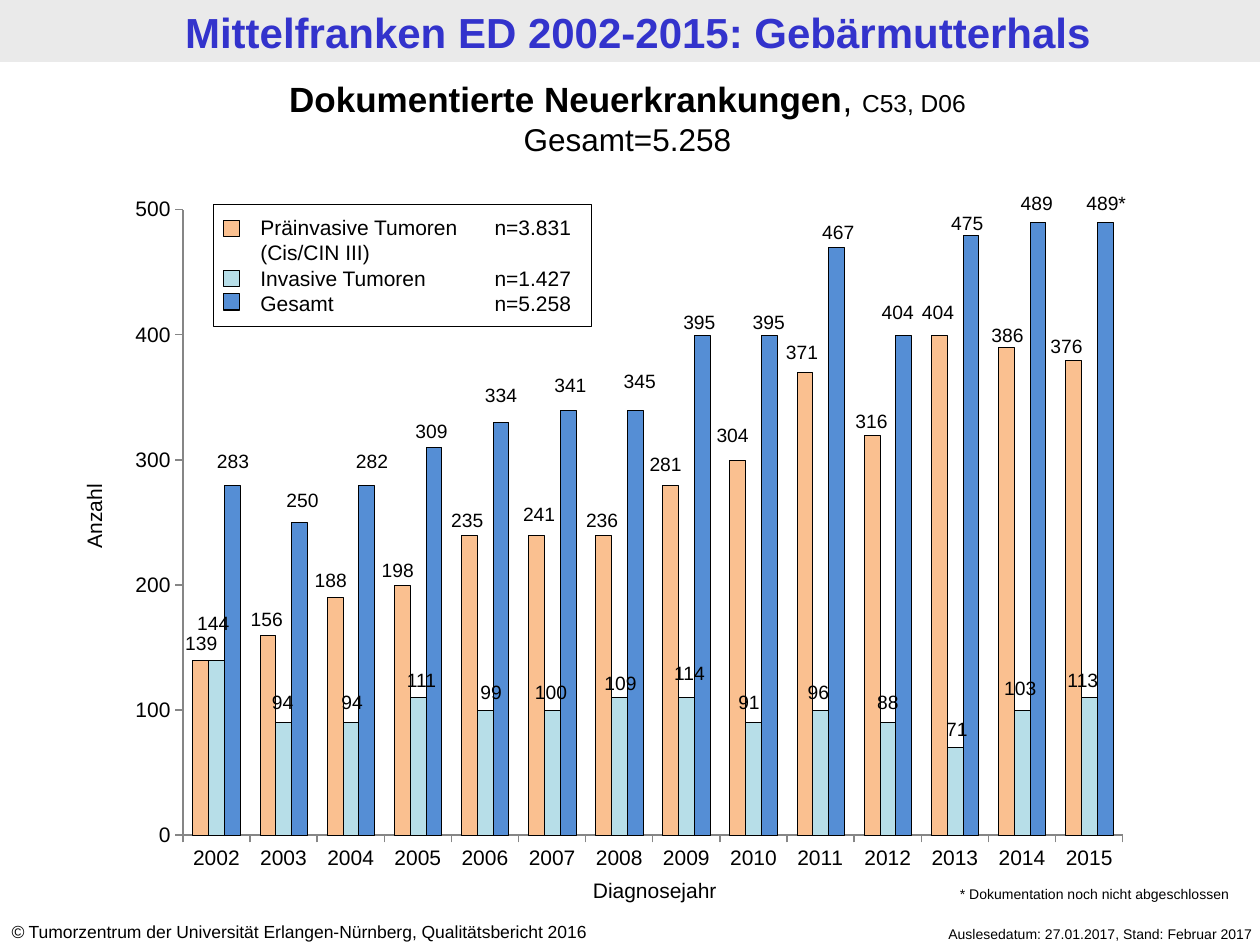
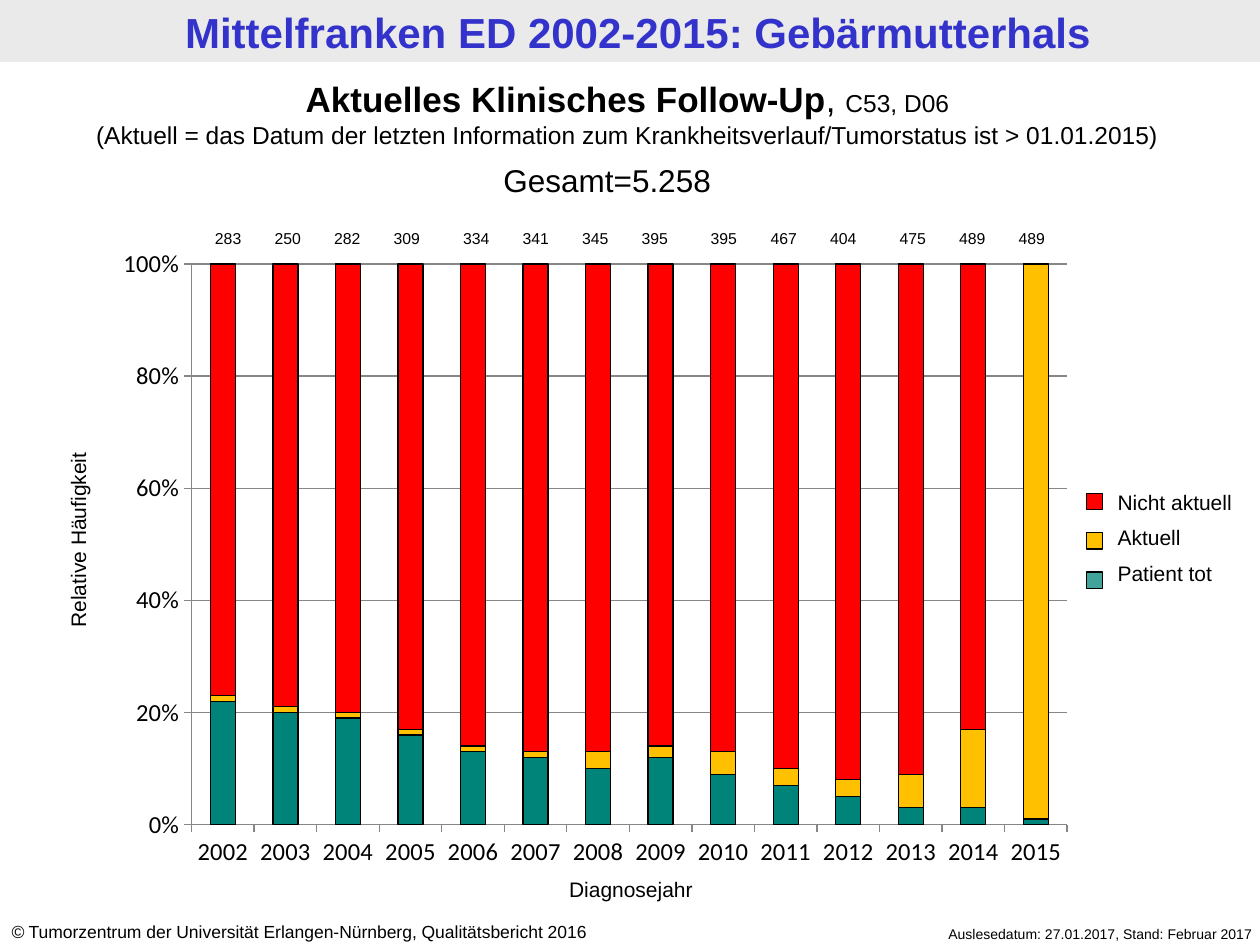
from dataclasses import dataclass

from lxml.etree import SubElement
from pptx import Presentation
from pptx.chart.data import CategoryChartData
from pptx.dml.color import RGBColor
from pptx.enum.chart import XL_CHART_TYPE, XL_TICK_MARK
from pptx.enum.shapes import MSO_SHAPE
from pptx.enum.text import MSO_AUTO_SIZE, PP_ALIGN
from pptx.oxml import parse_xml
from pptx.oxml.ns import nsdecls, qn
from pptx.util import Cm, Pt


@dataclass(frozen=True)
class Theme:
    # Fonts
    font: str = "Arial"
    chart_font: str = "Calibri"
    # Colours
    ink: str = "000000"
    title: str = "3333CC"
    band: str = "EAEAEA"
    axis: str = "868686"
    preinvasive: str = "FAC090"
    invasive: str = "B7DEE8"
    total: str = "558ED5"
    dead: str = "008378"
    current: str = "FFC000"
    outdated: str = "FF0000"
    # Type sizes
    title_size: int = 24
    heading_size: int = 20
    total_size: int = 18
    code_size: int = 14
    body_size: int = 12
    label_size: int = 11
    source_size: int = 10
    count_size: int = 9
    note_size: int = 8


THEME = Theme()
TITLE = "Mittelfranken ED 2002-2015: Gebärmutterhals"
YEARS = [str(year) for year in range(2002, 2016)]
SWATCH = 0.33

# New cases per year
PREINVASIVE = [139, 156, 188, 198, 235, 241, 236, 281, 304, 371, 316, 404, 386, 376]
INVASIVE = [144, 94, 94, 111, 99, 100, 109, 114, 91, 96, 88, 71, 103, 113]
TOTAL = [pre + inv for pre, inv in zip(PREINVASIVE, INVASIVE)]

# Centre and top of each bar's label, in cm
PREINVASIVE_SPOTS = [
    (4.06, 12.6), (5.38, 12.12), (6.67, 11.33), (8.02, 11.13), (9.42, 10.12),
    (10.87, 10), (12.14, 10.12), (13.42, 8.99), (14.77, 8.41), (16.17, 6.73),
    (17.57, 8.13), (18.91, 5.92), (20.31, 6.39), (21.5, 6.6)]
INVASIVE_SPOTS = [
    (4.3, 12.19), (5.7, 13.79), (7.1, 13.79), (8.5, 13.34), (9.9, 13.59),
    (11.11, 13.59), (12.51, 13.41), (13.9, 13.21), (15.1, 13.79), (16.5, 13.59),
    (17.9, 13.79), (19.29, 14.33), (20.57, 13.51), (21.83, 13.34)]
TOTAL_SPOTS = [
    (4.7, 8.92), (6.1, 9.72), (7.5, 8.92), (8.7, 8.33), (10.1, 7.59),
    (11.5, 7.39), (12.9, 7.32), (14.1, 6.12), (15.5, 6.12), (16.9, 4.32),
    (18.1, 5.92), (19.5, 4.12), (20.9, 3.73), (22.3, 3.73)]

# Follow-up status per year, in percent
DEAD = [22, 20, 19, 16, 13, 12, 10, 12, 9, 7, 5, 3, 3, 1]
CURRENT = [1, 1, 1, 1, 1, 1, 3, 2, 4, 3, 3, 6, 14, 99]
OUTDATED = [77, 79, 80, 83, 86, 87, 87, 86, 87, 90, 91, 91, 83, 0]
COUNT_CENTRES = [4.6, 5.8, 7.0, 8.2, 9.6, 10.8, 12.0, 13.2, 14.59, 15.8,
                 17.0, 18.4, 19.6, 20.8]


def rgb(color):
    return RGBColor.from_string(color)


def to_tens(values):
    return [round(value, -1) for value in values]


def add_run(paragraph, text, *, size=THEME.body_size, bold=False, italic=False,
            color=THEME.ink):
    run = paragraph.add_run()
    run.text = text
    run.font.name = THEME.font
    run.font.size = Pt(size)
    run.font.bold = bold
    run.font.italic = italic
    run.font.color.rgb = rgb(color)


class Deck:
    def __init__(self, theme):
        self.theme = theme
        self.prs = Presentation()
        self.prs.slide_width, self.prs.slide_height = Cm(25.4), Cm(19.05)
        self.slide = None

    def new_slide(self):
        """Add a slide with its title band and footers."""
        theme = self.theme
        self.slide = self.prs.slides.add_slide(self.prs.slide_layouts[6])
        self.rect(0, 0, 25.4, 1.25, fill=theme.band)
        self.text(0.16, 0.04, 25.4, 1.24,
                  [[(TITLE, dict(size=theme.title_size, bold=True, color=theme.title))]],
                  align=PP_ALIGN.CENTER, inset=(0.23, 0.1))
        source = dict(size=theme.source_size)
        self.text(-0.02, 18.43, 13.3, 0.69, [[
            ("©", dict(source, italic=True)),
            (" Tumorzentrum der Universität Erlangen-Nürnberg, Qualitätsbericht 2016",
             source)]])
        self.text(16.89, 18.52, 8.61, 0.61,
                  [[("Auslesedatum: 27.01.2017, Stand: Februar 2017",
                     dict(size=theme.note_size))]], align=PP_ALIGN.RIGHT)

    def rect(self, left, top, width, height, fill=None, line=None, alpha=None):
        box = self.slide.shapes.add_shape(
            MSO_SHAPE.RECTANGLE, Cm(left), Cm(top), Cm(width), Cm(height))
        box.shadow.inherit = False
        if fill:
            box.fill.solid()
            box.fill.fore_color.rgb = rgb(fill)
        else:
            box.fill.background()
        if line:
            box.line.color.rgb = rgb(line)
            box.line.width = Pt(0.75)
        else:
            box.line.fill.background()
        if alpha:
            color = box.fill._xPr.find(qn("a:solidFill"))[0]
            SubElement(color, qn("a:alpha"), val=str(alpha * 1000))

    def swatch(self, left, top, fill, alpha=None):
        self.rect(left, top, SWATCH, SWATCH, fill, self.theme.ink, alpha)

    def text(self, left, top, width, height, paragraphs, align=PP_ALIGN.LEFT,
             inset=(0.25, 0.13), rotation=0, gap=0, tabs=()):
        """Each paragraph is a list of (text, format) runs."""
        box = self.slide.shapes.add_textbox(Cm(left), Cm(top), Cm(width), Cm(height))
        box.rotation = rotation
        frame = box.text_frame
        frame.word_wrap = True
        frame.auto_size = MSO_AUTO_SIZE.SHAPE_TO_FIT_TEXT
        frame.margin_left = frame.margin_right = Cm(inset[0])
        frame.margin_top = frame.margin_bottom = Cm(inset[1])
        for number, runs in enumerate(paragraphs):
            paragraph = frame.add_paragraph() if number else frame.paragraphs[0]
            paragraph.alignment = align
            if tabs:
                stops = SubElement(paragraph._p.get_or_add_pPr(), qn("a:tabLst"))
                for position, side in tabs:
                    SubElement(stops, qn("a:tab"), pos=str(Cm(position)), algn=side)
            if number and gap:
                paragraph.space_before = Pt(gap)
            for text, style in runs:
                add_run(paragraph, text, **style)

    def heading(self, topic, second_line, second_size):
        theme = self.theme
        self.text(-0.1, 1.44, 25.5, 1.88, [
            [(topic, dict(size=theme.heading_size, bold=True)),
             (", ", dict(size=theme.heading_size)),
             ("C53, D06", dict(size=theme.code_size))],
            [(second_line, dict(size=second_size))]], align=PP_ALIGN.CENTER)

    def centred(self, centre, top, width, text, size, rotation=0):
        self.text(centre - width / 2, top, width, 0.75, [[(text, dict(size=size))]],
                  align=PP_ALIGN.CENTER, rotation=rotation)

    def chart(self, kind, frame, plot_area, series, *, gap, overlap, line_width,
              axis_font, axis_size, major, maximum=None, grid=False,
              number_format="General"):
        """Each series is (name, values, colour); plot_area is in shares of the frame."""
        data = CategoryChartData()
        data.categories = YEARS
        for name, values, _ in series:
            data.add_series(name, values)
        chart = self.slide.shapes.add_chart(kind, *map(Cm, frame), data).chart
        chart.has_legend = chart.has_title = False
        chart.font.name = self.theme.chart_font
        chart.font.size = Pt(self.theme.total_size)
        chart.font.color.rgb = rgb(self.theme.ink)

        # Bars
        plot = chart.plots[0]
        plot.vary_by_categories = False
        plot.gap_width, plot.overlap = gap, overlap
        for bars, (_, _, color) in zip(plot.series, series):
            bars.format.fill.solid()
            bars.format.fill.fore_color.rgb = rgb(color)
            bars.format.line.color.rgb = rgb(self.theme.ink)
            bars.format.line.width = Pt(line_width)

        # Axes
        for axis in (chart.category_axis, chart.value_axis):
            axis.major_tick_mark = XL_TICK_MARK.OUTSIDE
            axis.minor_tick_mark = XL_TICK_MARK.NONE
            axis.format.line.color.rgb = rgb(self.theme.axis)
            axis.tick_labels.font.name = axis_font
            axis.tick_labels.font.size = Pt(axis_size)
            axis.tick_labels.font.color.rgb = rgb(self.theme.ink)
        values_axis = chart.value_axis
        values_axis.minimum_scale = 0
        values_axis.major_unit = major
        if maximum:
            values_axis.maximum_scale = maximum
        values_axis.tick_labels.number_format = number_format
        values_axis.tick_labels.number_format_is_linked = False
        values_axis.has_major_gridlines = grid
        if grid:
            values_axis.major_gridlines.format.line.color.rgb = rgb(self.theme.axis)

        # Fixed inner plot area
        area = chart.element.find(".//" + qn("c:plotArea"))
        for old_layout in area.findall(qn("c:layout")):
            area.remove(old_layout)
        shares = "".join(f'<c:{tag} val="{share}"/>'
                         for tag, share in zip("xywh", plot_area))
        area.insert(0, parse_xml(
            f'<c:layout {nsdecls("c")}><c:manualLayout><c:layoutTarget val="inner"/>'
            f'<c:xMode val="edge"/><c:yMode val="edge"/>{shares}'
            '</c:manualLayout></c:layout>'))


def new_cases(deck):
    theme = deck.theme
    deck.new_slide()
    deck.chart(
        XL_CHART_TYPE.COLUMN_CLUSTERED, (2.33, 3.73, 20.73, 14.1),
        (0.0655, 0.0355, 0.914, 0.894),
        [("Präinvasive Tumoren", to_tens(PREINVASIVE), theme.preinvasive),
         ("Invasive Tumoren", to_tens(INVASIVE), theme.invasive),
         ("Gesamt", to_tens(TOTAL), theme.total)],
        gap=124, overlap=0, line_width=0.25, axis_font=theme.font,
        axis_size=theme.body_size, major=100, maximum=500)
    deck.heading("Dokumentierte Neuerkrankungen", "Gesamt=5.258", theme.total_size)
    deck.centred(13.2, 17.56, 7.8, "Diagnosejahr", theme.body_size)
    deck.centred(1.88, 10.03, 6.63, "Anzahl", theme.body_size, rotation=270)

    # Legend
    entries = ["Präinvasive Tumoren\tn=\t3.831 (Cis/CIN III)",
               "Invasive Tumoren \t\tn=\t1.427", "Gesamt\t\tn=\t5.258"]
    deck.text(5, 4.2, 6.93, 2.31, [[(entry, {})] for entry in entries],
              tabs=[(3.73, "l"), (4.72, "l"), (5.99, "r"), (11.2, "l")])
    deck.rect(4.3, 4.12, 7.62, 2.46, line=theme.ink)
    for top, fill in ((4.44, theme.preinvasive), (5.45, theme.invasive),
                      (5.92, theme.total)):
        deck.swatch(4.5, top, fill)

    # Bar labels
    for values, spots in ((PREINVASIVE, PREINVASIVE_SPOTS),
                          (INVASIVE, INVASIVE_SPOTS),
                          (TOTAL[:-1] + [f"{TOTAL[-1]}*"], TOTAL_SPOTS)):
        for value, (centre, top) in zip(values, spots):
            deck.centred(centre, top, 1.6, str(value), theme.label_size)
    deck.text(19.1, 17.73, 6.86, 0.61,
              [[("* Dokumentation noch nicht abgeschlossen",
                 dict(size=theme.note_size))]])


def follow_up(deck):
    theme = deck.theme
    deck.new_slide()
    deck.chart(
        XL_CHART_TYPE.COLUMN_STACKED_100, (2.1, 4.75, 19.81, 12.98),
        (0.089, 0.044, 0.891, 0.871),
        [("Patient tot", DEAD, theme.dead), ("Aktuell", CURRENT, theme.current),
         ("Nicht aktuell", OUTDATED, theme.outdated)],
        gap=150, overlap=100, line_width=0.75, axis_font=theme.chart_font,
        axis_size=theme.code_size, major=0.2, grid=True, number_format="0%")
    deck.centred(1.56, 10.51, 6.12, "Relative Häufigkeit", theme.body_size, rotation=270)
    deck.centred(12.72, 17.55, 5.72, "Diagnosejahr", theme.body_size)

    # Legend
    deck.text(22.28, 9.73, 3.61, 2.31,
              [[(status, {})] for status in ("Nicht aktuell", "Aktuell", "Patient tot")],
              gap=6)
    for row, (fill, alpha) in enumerate(((theme.outdated, None), (theme.current, None),
                                         (theme.dead, 74))):
        deck.swatch(21.9, 9.95 + 0.79 * row, fill, alpha)

    # Heading and yearly totals
    deck.heading("Aktuelles Klinisches Follow-Up",
                 "(Aktuell = das Datum der letzten Information zum "
                 "Krankheitsverlauf/Tumorstatus ist > 01.01.2015)", theme.code_size)
    deck.text(9.9, 3.12, 5.59, 1.02,
              [[("Gesamt=5.258", dict(size=theme.total_size))]])
    for count, centre in zip(TOTAL, COUNT_CENTRES):
        deck.centred(centre, 4.49, 1.4, str(count), theme.count_size)


def main():
    deck = Deck(THEME)
    new_cases(deck)
    follow_up(deck)
    deck.prs.save("out.pptx")


if __name__ == "__main__":
    main()
